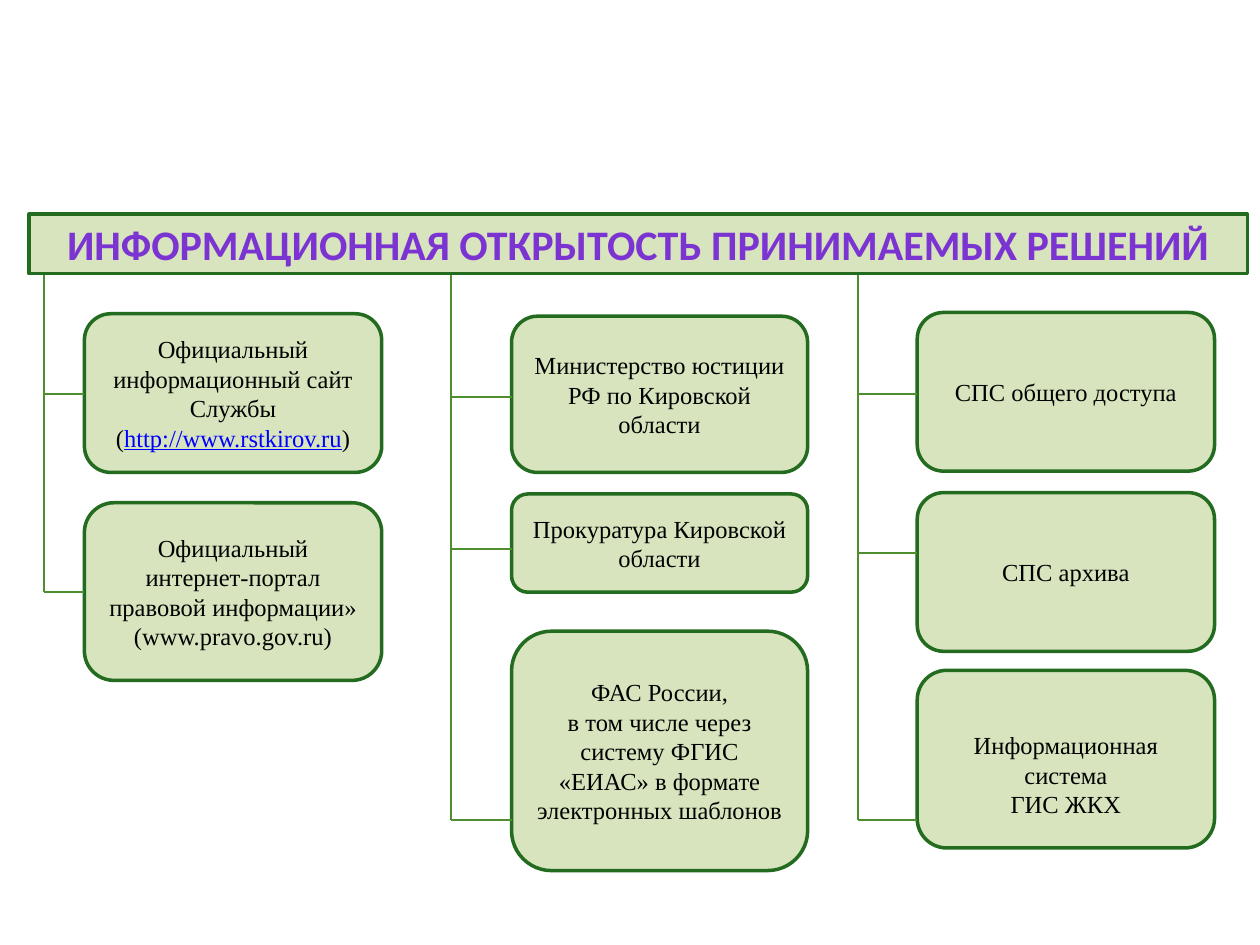
from dataclasses import dataclass

from lxml import etree
from pptx import Presentation
from pptx.dml.color import RGBColor
from pptx.enum.shapes import MSO_CONNECTOR, MSO_SHAPE
from pptx.enum.text import MSO_ANCHOR, MSO_AUTO_SIZE, PP_ALIGN
from pptx.oxml import parse_xml
from pptx.oxml.ns import nsdecls, qn
from pptx.util import Pt

ROUNDED = MSO_SHAPE.ROUNDED_RECTANGLE
STRAIGHT = MSO_CONNECTOR.STRAIGHT
MIDDLE = MSO_ANCHOR.MIDDLE
CENTER = PP_ALIGN.CENTER
NO_FIT = MSO_AUTO_SIZE.NONE
TITLE_ONLY = 5
SCALE = 9144  # EMU per px, 100 px to the inch


@dataclass(frozen=True)
class Theme:
    box: RGBColor = RGBColor.from_string("D7E4BD")
    border: RGBColor = RGBColor.from_string("236B1F")
    branch: RGBColor = RGBColor.from_string("4E8E2E")
    title: RGBColor = RGBColor.from_string("7B34D2")
    ink: RGBColor = RGBColor.from_string("010101")
    link: RGBColor = RGBColor.from_string("0000FF")
    title_font: str = "Calibri"
    body_font: str = "Times New Roman"
    title_size: int = 24
    body_size: int = 14
    border_width: float = 2
    trunk_width: float = 1.5
    branch_width: float = 1.25


@dataclass(frozen=True)
class Node:
    """A box of a column; y and branch are measured from the column top."""
    y: int
    h: int
    branch: int
    lines: list
    pad_top: int = 5


THEME = Theme()

HEADER = (23, 170, 967, 47)
TITLE = "ИНФОРМАЦИОННАЯ ОТКРЫТОСТЬ ПРИНИМАЕМЫХ РЕШЕНИЙ"

# Column box, gap between trunk and nodes, nodes; a tuple is text, link, text
COLUMNS = [
    ((35, 218, 268, 252), 32, [
        Node(31, 126, 95, ["Официальный информационный сайт Службы",
                           ("(", "http://www.rstkirov.ru", ")")]),
        Node(181, 141, 252, ["Официальный интернет-портал правовой "
                             "информации» (www.pravo.gov.ru)"]),
    ]),
    ((358, 218, 283, 433), 48, [
        Node(33, 124, 97, ["Министерство юстиции РФ по Кировской области"]),
        Node(174, 78, 218, ["Прокуратура Кировской области"]),
        Node(283, 190, 433, ["ФАС России,",
                             "в том числе через систему ФГИС «ЕИАС» "
                             "в формате электронных шаблонов"]),
    ]),
    ((681, 218, 283, 433), 47, [
        Node(30, 126, 95, ["СПС общего доступа"]),
        Node(173, 126, 221, ["СПС архива"]),
        Node(314, 141, 433, ["Информационная система", "ГИС ЖКХ"], 29),
    ]),
]


def px(*values):
    return [v * SCALE for v in values]


def style_box(sp):
    sp.fill.solid()
    sp.fill.fore_color.rgb = THEME.box
    sp.line.color.rgb = THEME.border
    sp.line.width = Pt(THEME.border_width)
    tf = sp.text_frame
    tf.word_wrap = True
    tf.auto_size = NO_FIT
    tf.vertical_anchor = MIDDLE


def style_font(font, name, size, color):
    font.name = name
    font.size = Pt(size)
    font.color.rgb = color


def add_header(s, box):
    """Title placeholder shaped as a rounded bar."""
    sp = s.shapes.title
    sp.left, sp.top, sp.width, sp.height = px(*box)
    sp._element.spPr.find(qn("a:xfrm")).addnext(parse_xml(
        f'<a:prstGeom {nsdecls("a")} prst="roundRect"><a:avLst/></a:prstGeom>'))
    style_box(sp)
    sp.text_frame.text = TITLE
    p = sp.text_frame.paragraphs[0]
    p.alignment = CENTER
    style_font(p.runs[0].font, THEME.title_font, THEME.title_size, THEME.title)
    p.runs[0].font.bold = True


def add_line(s, x1, y1, x2, y2, width):
    line = s.shapes.add_connector(STRAIGHT, *px(x1, y1, x2, y2))
    line.line.color.rgb = THEME.branch
    line.line.width = Pt(width)
    etree.SubElement(line._element.spPr, qn("a:effectLst"))


def add_node(s, box, node):
    sp = s.shapes.add_shape(ROUNDED, *px(*box))
    sp.shadow.inherit = False
    style_box(sp)
    tf = sp.text_frame
    tf.margin_top = node.pad_top * SCALE
    for i, line in enumerate(node.lines):
        p = tf.add_paragraph() if i else tf.paragraphs[0]
        p.alignment = CENTER
        parts = (line,) if isinstance(line, str) else line
        for k, part in enumerate(parts):
            r = p.add_run()
            r.text = part
            is_link = k == 1
            style_font(r.font, THEME.body_font, THEME.body_size,
                       THEME.link if is_link else THEME.ink)
            r.font.underline = is_link


def add_column(s, box, gap, nodes):
    """Trunk on the left edge, with a branch to each node."""
    x, y, w, h = box
    for node in nodes:
        add_node(s, (x + gap, y + node.y, w - gap, node.h), node)
        add_line(s, x, y + node.branch, x + gap, y + node.branch,
                 THEME.branch_width)
    add_line(s, x, y, x, y + h, THEME.trunk_width)


def main():
    prs = Presentation()
    prs.slide_width, prs.slide_height = px(1000, 750)
    s = prs.slides.add_slide(prs.slide_layouts[TITLE_ONLY])
    add_header(s, HEADER)
    for box, gap, nodes in COLUMNS:
        add_column(s, box, gap, nodes)
    prs.save("out.pptx")


if __name__ == "__main__":
    main()
